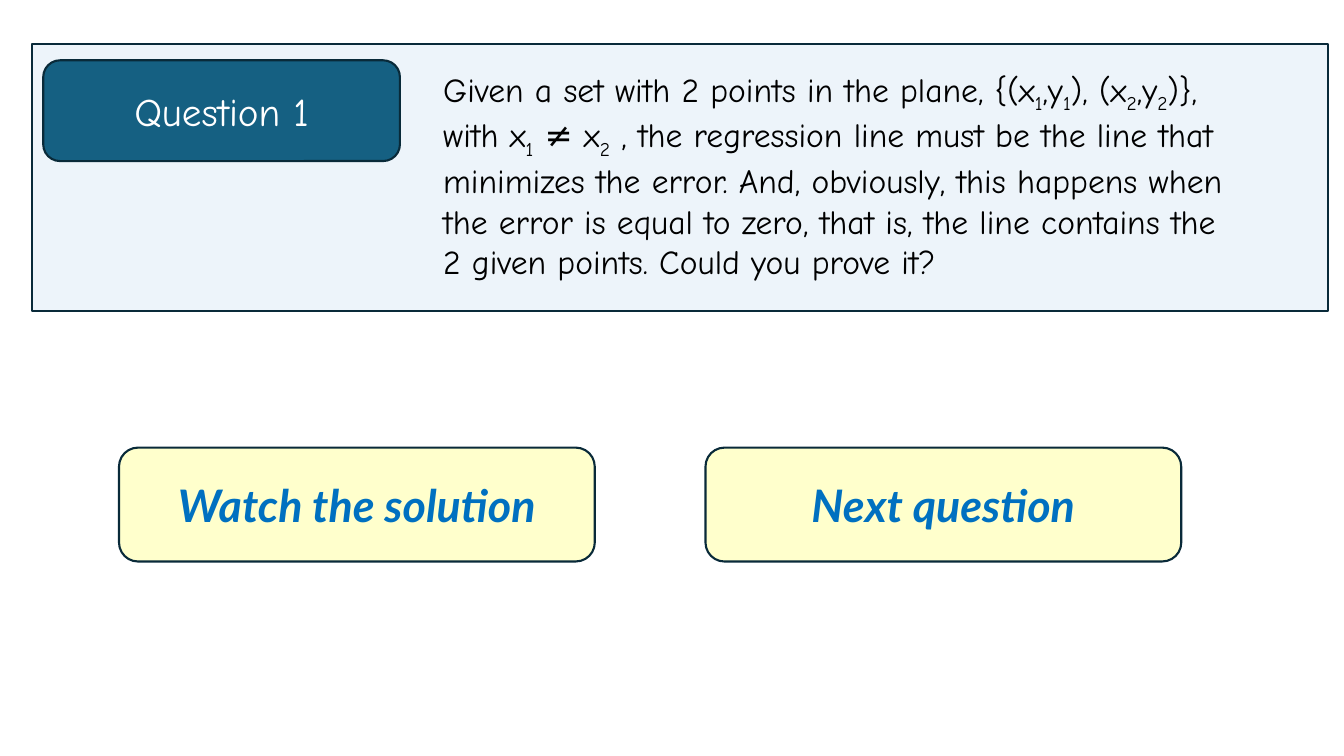
from dataclasses import dataclass

from lxml import etree
from pptx import Presentation
from pptx import util as u
from pptx.dml.color import RGBColor
from pptx.enum import shapes, text
from pptx.oxml.ns import qn


@dataclass(frozen=True)
class Theme:
    outline: str = "092A39"
    panel: str = "DCEAF7"
    badge: str = "156082"
    button: str = "FFFFCC"
    button_label: str = "0070C0"
    badge_label: str = "FFFFFF"
    body: str = "000000"
    reading_font: str = "Comic Neue"
    button_font: str = "Lato"
    body_size: int = 24
    badge_size: int = 28
    button_size: int = 32
    outline_width: float = 1.5


@dataclass(frozen=True)
class Box:
    left: float
    top: float
    width: float
    height: float

    def lengths(self) -> list[u.Cm]:
        return [u.Cm(v) for v in (self.left, self.top, self.width, self.height)]


@dataclass(frozen=True)
class Label:
    wording: str
    font: str
    size: int
    color: str
    emphasis: bool = False


@dataclass(frozen=True)
class Card:
    box: Box
    fill: str
    label: Label | None = None
    rounded: bool = True
    opacity: int = 100


THEME = Theme()

# An underscore marks the next character as a subscript
STATEMENT = (
    "Given a set with 2 points in the plane, {(x_1,y_1), (x_2,y_2)},",
    "with x_1 ≠ x_2 , the regression line must be the line that",
    "minimizes the error. And, obviously, this happens when",
    "the error is equal to zero, that is, the line contains the",
    "2 given points. Could you prove it?",
)
STATEMENT_BOX = Box(10.72, 1.6, 22.76, 5.38)
STATEMENT_INSET = 0.45

PANEL = Card(Box(0.81, 1.12, 32.66, 6.71), THEME.panel, rounded=False, opacity=50)
BADGE = Card(
    Box(1.09, 1.52, 8.99, 2.54), THEME.badge,
    Label("Question 1", THEME.reading_font, THEME.badge_size, THEME.badge_label),
)
BUTTON_LEFT, BUTTON_STEP = 3, 14.78
BUTTONS = [
    Card(
        Box(BUTTON_LEFT + i * BUTTON_STEP, 11.28, 11.99, 2.87), THEME.button,
        Label(wording, THEME.button_font, THEME.button_size, THEME.button_label, True),
    )
    for i, wording in enumerate(("Watch the solution", "Next question"))
]


def style_run(run, label: Label) -> None:
    font = run.font
    font.name, font.size = label.font, u.Pt(label.size)
    font.color.rgb = RGBColor.from_string(label.color)
    if label.emphasis:
        font.bold = font.italic = True


def draw_card(slide, card: Card) -> None:
    kind = shapes.MSO_SHAPE.ROUNDED_RECTANGLE if card.rounded else shapes.MSO_SHAPE.RECTANGLE
    shape = slide.shapes.add_shape(kind, *card.box.lengths())
    shape.shadow.inherit = False
    shape.fill.solid()
    shape.fill.fore_color.rgb = RGBColor.from_string(card.fill)
    shape.line.color.rgb = RGBColor.from_string(THEME.outline)
    shape.line.width = u.Pt(THEME.outline_width)
    if card.opacity < 100:
        fill_color = shape._element.spPr.find(qn("a:solidFill")).find(qn("a:srgbClr"))
        etree.SubElement(fill_color, qn("a:alpha")).set("val", str(card.opacity * 1000))
    if card.label:
        frame = shape.text_frame
        frame.text = card.label.wording
        frame.vertical_anchor = text.MSO_ANCHOR.MIDDLE
        line = frame.paragraphs[0]
        line.alignment = text.PP_ALIGN.CENTER
        style_run(line.runs[0], card.label)


def add_piece(line, wording: str, subscript: bool = False) -> None:
    run = line.add_run()
    run.text = wording
    style_run(run, Label(wording, THEME.reading_font, THEME.body_size, THEME.body))
    if subscript:
        run._r.get_or_add_rPr().set("baseline", "-25000")


def draw_statement(slide) -> None:
    frame = slide.shapes.add_textbox(*STATEMENT_BOX.lengths()).text_frame
    frame.word_wrap = True
    frame.auto_size = text.MSO_AUTO_SIZE.SHAPE_TO_FIT_TEXT
    frame.margin_left = u.Cm(STATEMENT_INSET)
    for i, wording in enumerate(STATEMENT):
        line = frame.add_paragraph() if i else frame.paragraphs[0]
        opening, *rest = wording.split("_")
        add_piece(line, opening)
        for piece in rest:
            add_piece(line, piece[0], subscript=True)
            add_piece(line, piece[1:])


def main() -> None:
    deck = Presentation()
    deck.slide_width, deck.slide_height = u.Cm(33.87), u.Cm(19.05)
    slide = deck.slides.add_slide(deck.slide_layouts[6])

    # Question panel
    draw_card(slide, PANEL)
    draw_statement(slide)
    draw_card(slide, BADGE)

    # Navigation buttons
    for button in BUTTONS:
        draw_card(slide, button)

    deck.save("out.pptx")


if __name__ == "__main__":
    main()
